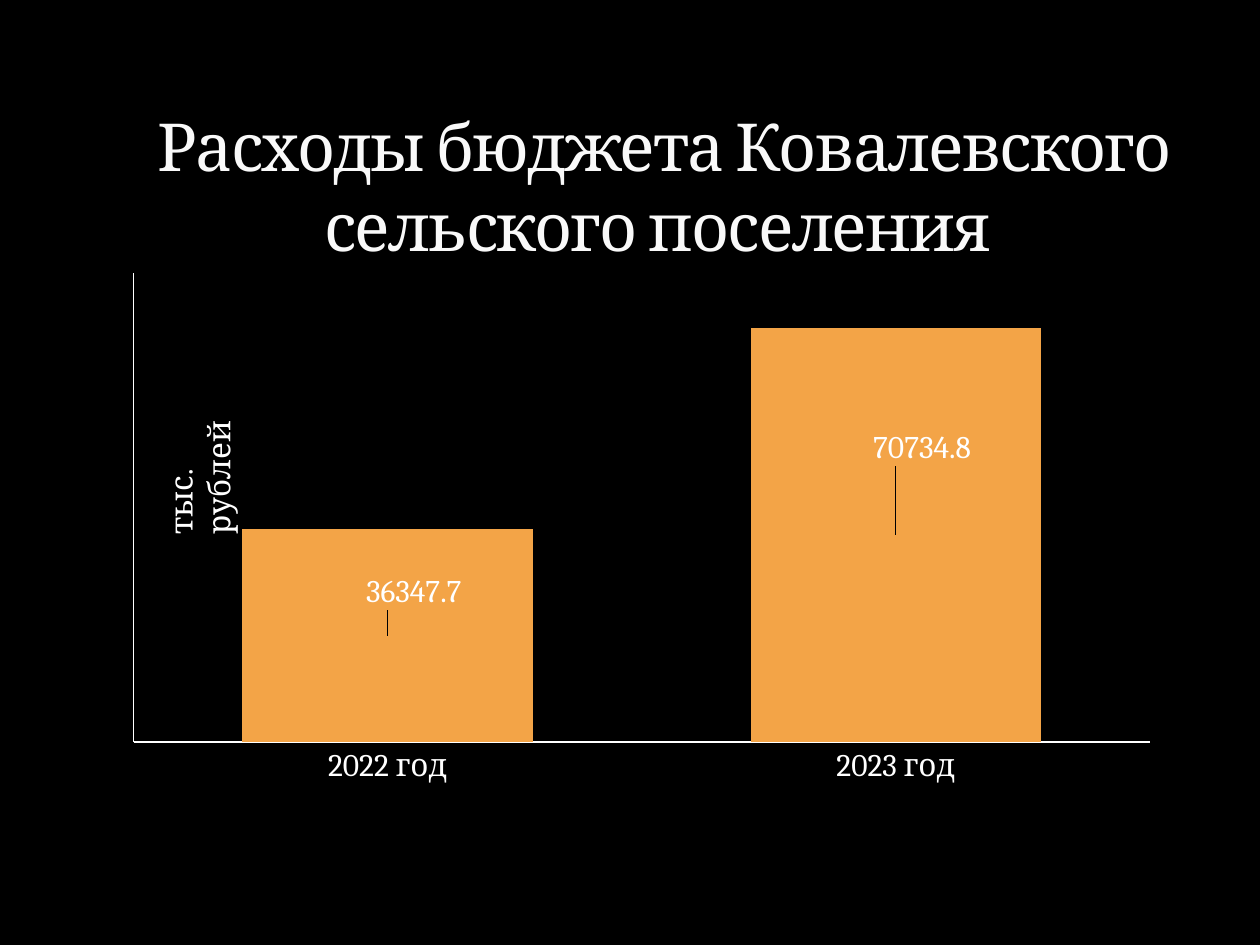
"""Build a slide that compares two years of village spending."""
from dataclasses import dataclass

from lxml.etree import SubElement as Sub
from pptx import Presentation
from pptx.chart.data import CategoryChartData as Data
from pptx.dml.color import RGBColor as Rgb
from pptx.enum.chart import XL_CHART_TYPE as Kind, XL_TICK_LABEL_POSITION as Label
from pptx.enum.chart import XL_TICK_MARK as Tick
from pptx.enum.text import MSO_ANCHOR as Anchor, MSO_AUTO_SIZE as Auto, PP_ALIGN as Align
from pptx.oxml import parse_xml
from pptx.oxml.ns import nsdecls, qn
from pptx.util import Pt


@dataclass(frozen=True)
class Theme:
    back: Rgb = Rgb(0, 0, 0)
    text: Rgb = Rgb(255, 255, 255)
    head: Rgb = Rgb(0xF9, 0xF9, 0xF9)
    edge: str = "3C4422"
    bar: Rgb = Rgb(0xF3, 0xA4, 0x47)
    face: str = "Cambria"
    big: float = 37.8
    base: float = 18


THEME = Theme()


def style(font, size, color):
    font.name, font.size = THEME.face, Pt(size)
    font.color.rgb = color


def add_text(slide, text, box, size, color):
    shape = slide.shapes.add_textbox(*map(Pt, box))
    frame = shape.text_frame
    frame.word_wrap = True
    frame.text = text
    style(frame.paragraphs[0].runs[0].font, size, color)
    return shape


def add_title(slide, text, box):
    frame = add_text(slide, text, box, THEME.big, THEME.head).text_frame
    frame.vertical_anchor = Anchor.BOTTOM
    para = frame.paragraphs[0]
    para.alignment = Align.CENTER
    props = para.runs[0]._r.get_or_add_rPr()
    props.set("spc", "-100")
    line = parse_xml(
        f'<a:ln {nsdecls("a")} w="3175"><a:solidFill><a:srgbClr val="{THEME.edge}">'
        '<a:alpha val="25000"/></a:srgbClr></a:solidFill></a:ln>')
    props.insert(0, line)


def add_unit(slide, text, box):
    shape = add_text(slide, text, box, THEME.base, THEME.text)
    shape.rotation = 270
    shape.text_frame.auto_size = Auto.SHAPE_TO_FIT_TEXT


def place(host, spot, **parts):
    """Give a chart part a manual layout."""
    for old in host.findall(qn("c:layout")):
        host.remove(old)
    layout = host.makeelement(qn("c:layout"))
    host.insert(spot, layout)
    manual = Sub(layout, qn("c:manualLayout"))
    for name, value in parts.items():
        Sub(manual, qn(f"c:{name}")).set("val", str(value))


def add_bars(slide, cats, vals, shifts, box):
    data = Data()
    data.categories = cats
    data.add_series("Series 1", vals)
    chart = slide.shapes.add_chart(Kind.COLUMN_STACKED, *map(Pt, box), data).chart
    chart.has_legend = chart.has_title = False
    style(chart.font, THEME.base, THEME.text)
    for axis in (chart.category_axis, chart.value_axis):
        axis.major_tick_mark = axis.minor_tick_mark = Tick.NONE
        axis.has_major_gridlines = False
        axis.format.line.color.rgb = THEME.text
        axis.format.line.width = Pt(1)
    scale = chart.value_axis
    scale.tick_label_position = Label.NONE
    scale.minimum_scale, scale.maximum_scale = 0, 80000
    plot = chart.plots[0]
    plot.gap_width, plot.overlap, plot.vary_by_categories = 75, 100, False
    bars = plot.series[0]
    bars.format.fill.solid()
    bars.format.fill.fore_color.rgb = THEME.bar
    bars.data_labels.show_value = True
    for i, (x, y) in enumerate(shifts):
        style(bars.points[i].data_label.font, THEME.base, THEME.text)
        label = bars.data_labels._element.findall(qn("c:dLbl"))[i]
        place(label, 1, x=x, y=y)
    area = chart._chartSpace.chart.plotArea
    place(area, 0, layoutTarget="inner", xMode="edge", yMode="edge",
          x=0.018, y=0.014, w=0.966, h=0.757)


def main():
    deck = Presentation()
    deck.slide_width, deck.slide_height = Pt(720), Pt(540)
    slide = deck.slides.add_slide(deck.slide_layouts[6])
    slide.background.fill.solid()
    slide.background.fill.fore_color.rgb = THEME.back
    add_bars(slide, ["2022 год", "2023 год"], [36347.7, 70734.8],
             [(0.025, -0.07), (0.025, -0.14)], (65.5, 151.2, 601.2, 354.2))
    add_title(slide, "Расходы бюджета Ковалевского сельского поселения ",
              (38.9, 111.6, 680.4, 43.2))
    add_unit(slide, "тыс. рублей", (50.4, 245.5, 105.1, 28.8))
    deck.save("out.pptx")


if __name__ == "__main__":
    main()
